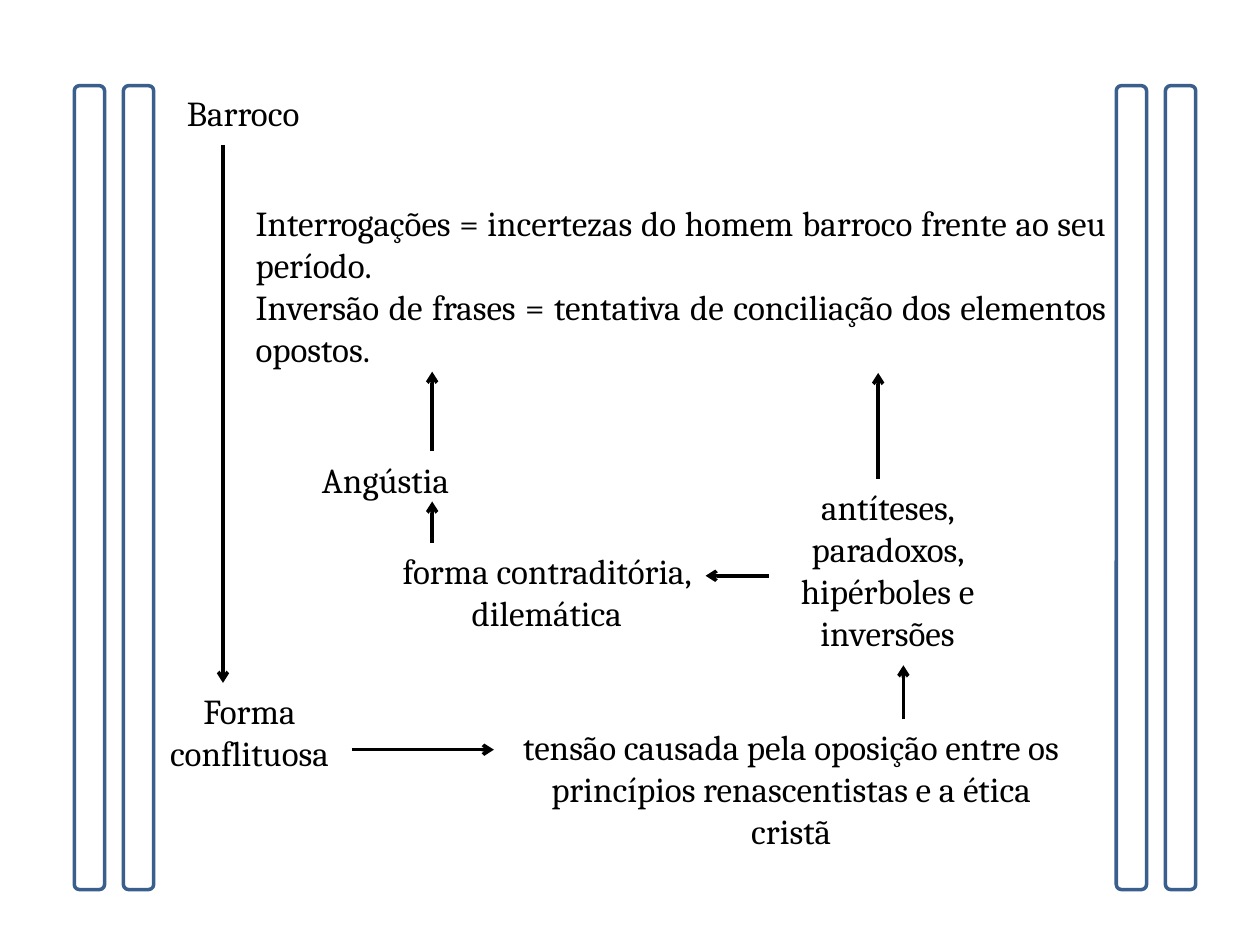
from dataclasses import dataclass

from lxml import etree
from pptx import Presentation
from pptx.dml.color import RGBColor
from pptx.enum.shapes import MSO_CONNECTOR, MSO_SHAPE
from pptx.enum.text import MSO_AUTO_SIZE, PP_ALIGN
from pptx.oxml.ns import qn
from pptx.util import Pt

LINE = MSO_CONNECTOR.STRAIGHT
ROUND = MSO_SHAPE.ROUNDED_RECTANGLE
CENTER = PP_ALIGN.CENTER
JUSTIFY = PP_ALIGN.JUSTIFY
GROW = MSO_AUTO_SIZE.SHAPE_TO_FIT_TEXT
SCALE = 9144


def emu(*px):
    return [n * SCALE for n in px]


@dataclass(frozen=True)
class Theme:
    ink: RGBColor = RGBColor(0, 0, 0)
    paper: RGBColor = RGBColor(255, 255, 255)
    edge: RGBColor = RGBColor(0x3A, 0x5F, 0x8C)
    font: str = "Cambria"
    size: Pt = Pt(20)
    width: Pt = Pt(2)


class Board:
    def __init__(self, slide, theme):
        self.slide = slide
        self.theme = theme

    def text(self, box, *lines, align=CENTER):
        frame = self.slide.shapes.add_textbox(*emu(*box)).text_frame
        frame.word_wrap = True
        frame.auto_size = GROW
        frame.text = "\n".join(lines)
        for para in frame.paragraphs:
            para.alignment = align
            para.font.name = self.theme.font
            para.font.size = self.theme.size
            para.font.color.rgb = self.theme.ink

    def arrow(self, *ends):
        link = self.slide.shapes.add_connector(LINE, *emu(*ends))
        link.line.color.rgb = self.theme.ink
        link.line.width = self.theme.width
        stroke = link.line._get_or_add_ln()
        etree.SubElement(stroke, qn("a:tailEnd"), type="arrow")
        etree.SubElement(link._element.spPr, qn("a:effectLst"))

    def pillar(self, *box):
        bar = self.slide.shapes.add_shape(ROUND, *emu(*box))
        bar.shadow.inherit = False
        bar.fill.solid()
        bar.fill.fore_color.rgb = self.theme.paper
        bar.line.color.rgb = self.theme.edge
        bar.line.width = self.theme.width


def main():
    deck = Presentation()
    deck.slide_width, deck.slide_height = emu(1000, 750)
    board = Board(deck.slides.add_slide(deck.slide_layouts[6]), Theme())

    board.text((122, 68, 142, 44), "Barroco")
    board.text((117, 542, 162, 77), "Forma conflituosa")
    board.text(
        (398, 571, 460, 111),
        "tensão causada pela oposição entre os princípios renascentistas e a ética cristã",
    )
    board.text((618, 380, 173, 145), "antíteses, paradoxos, hipérboles e inversões")
    board.text((274, 431, 320, 77), "forma contraditória, dilemática")
    board.text((209, 359, 194, 44), "Angústia")
    board.text(
        (193, 155, 695, 145),
        "Interrogações = incertezas do homem barroco frente ao seu período.",
        "Inversão de frases = tentativa de conciliação dos elementos opostos.",
        align=JUSTIFY,
    )

    for ends in (
        (177, 115, 177, 542),
        (279, 595, 392, 595),
        (717, 571, 717, 528),
        (610, 457, 560, 457),
        (343, 431, 343, 398),
        (697, 380, 697, 296),
        (343, 358, 343, 295),
    ):
        board.arrow(*ends)

    for side in (59, 886):
        for step in (0, 39):
            board.pillar(side + step, 68, 24, 638)

    deck.save("out.pptx")


if __name__ == "__main__":
    main()
